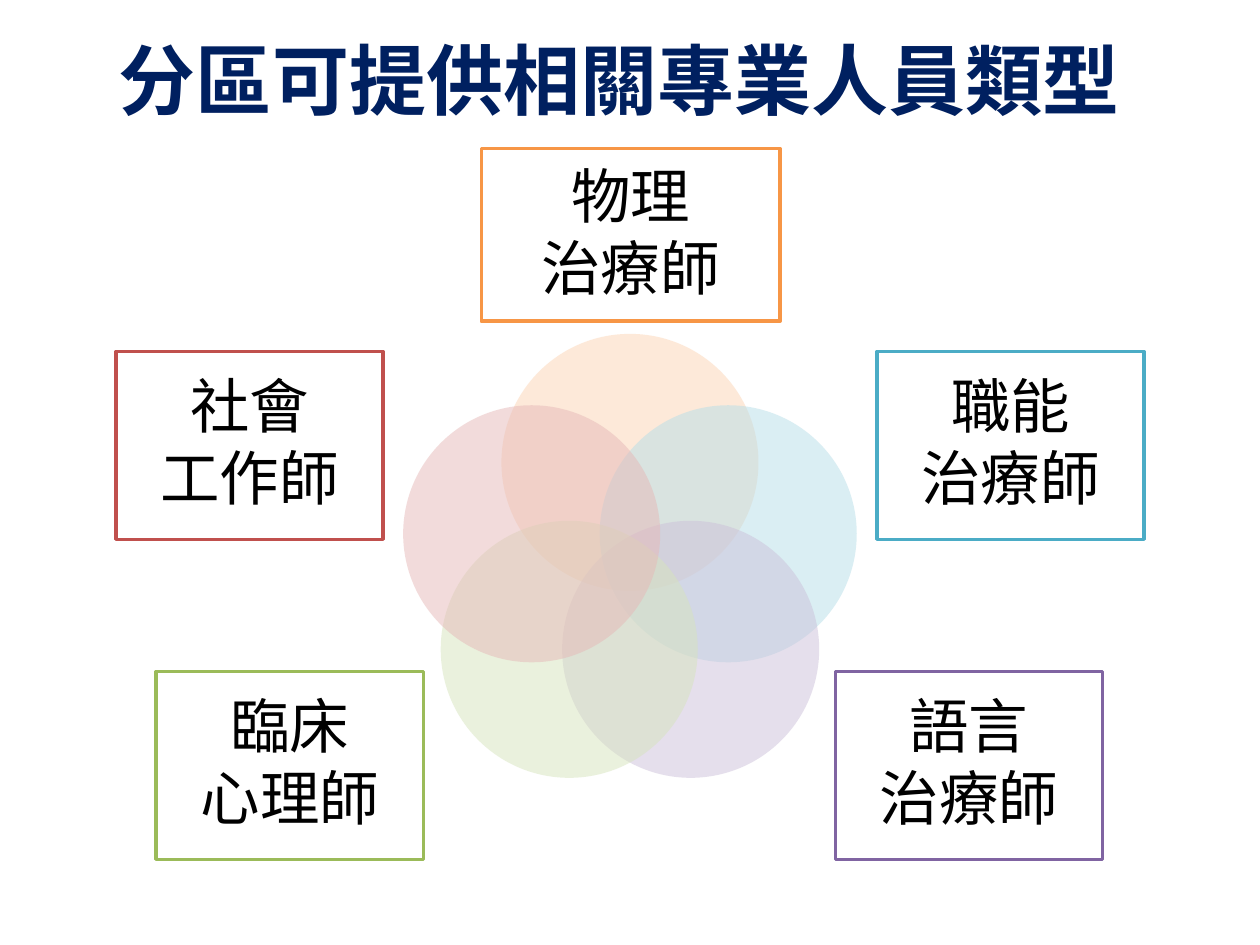
from dataclasses import dataclass
from math import cos, radians, sin

from lxml import etree
from pptx import Presentation
from pptx.dml.color import RGBColor
from pptx.enum.shapes import MSO_SHAPE
from pptx.enum.text import MSO_ANCHOR, PP_ALIGN
from pptx.oxml.ns import qn
from pptx.util import Inches, Pt

OVAL, RECTANGLE = MSO_SHAPE.OVAL, MSO_SHAPE.RECTANGLE
MIDDLE, CENTER = MSO_ANCHOR.MIDDLE, PP_ALIGN.CENTER


@dataclass(frozen=True)
class Theme:
    font: str = "Noto Sans CJK SC"
    title_size: int = 44
    label_size: int = 34
    title: str = "002060"
    text: str = "000000"
    paper: str = "FFFFFF"


THEME = Theme()


def write_lines(frame, lines, size, color, bold=False):
    """Fill a text frame with centred lines, using the font for Chinese too."""
    frame.word_wrap = True
    frame.vertical_anchor = MIDDLE
    for index, line in enumerate(lines):
        paragraph = frame.paragraphs[0] if index == 0 else frame.add_paragraph()
        paragraph.alignment = CENTER
        run = paragraph.add_run()
        run.text = line
        style = {"name": THEME.font, "size": Pt(size), "bold": bold}
        for attribute, value in style.items():
            setattr(run.font, attribute, value)
        run.font.color.rgb = RGBColor.from_string(color)
        east_asian = etree.SubElement(run.font._element, qn("a:ea"))
        east_asian.set("typeface", THEME.font)


def add_filled(kind, left, top, width, height, color):
    shape = slide.shapes.add_shape(
        kind, Inches(left), Inches(top), Inches(width), Inches(height))
    shape.shadow.inherit = False
    shape.fill.solid()
    shape.fill.fore_color.rgb = RGBColor.from_string(color)
    return shape


prs = Presentation()
prs.slide_width, prs.slide_height = Inches(10), Inches(7.5)
slide = prs.slides.add_slide(prs.slide_layouts[6])

title = slide.shapes.add_textbox(Inches(0.79), Inches(0), Inches(8.25), Inches(1.25))
write_lines(title.text_frame, ["分區可提供相關專業人員類型"],
            THEME.title_size, THEME.title, bold=True)

# Clockwise from the top: lines, circle colour, border colour, label box
PROFESSIONS = [
    (("物理", "治療師"), "FCD5B5", "F79646", (3.82, 1.18, 2.37, 1.37)),
    (("職能", "治療師"), "B7DEE8", "4BACC6", (6.96, 2.79, 2.12, 1.49)),
    (("語言", "治療師"), "CCC1DA", "8064A2", (6.63, 5.33, 2.12, 1.49)),
    (("臨床", "心理師"), "D7E4BD", "9BBB59", (1.24, 5.33, 2.12, 1.49)),
    (("社會", "工作師"), "E6B9B8", "C0504D", (0.92, 2.79, 2.12, 1.49)),
]
RING_X, RING_Y, RING_RADIUS, DIAMETER = 5, 4.49, 0.82, 2.04
NO_MARGINS = dict.fromkeys(
    ("margin_left", "margin_top", "margin_right", "margin_bottom"), 0)
LABEL_SPACING = {"line_spacing": 0.9, "space_after": Pt(4.3)}

for index, (lines, circle_color, border_color, box) in enumerate(PROFESSIONS):
    angle = radians(index * 360 / len(PROFESSIONS))
    circle = add_filled(
        OVAL,
        RING_X + RING_RADIUS * sin(angle) - DIAMETER / 2,
        RING_Y - RING_RADIUS * cos(angle) - DIAMETER / 2,
        DIAMETER, DIAMETER, circle_color)
    circle.line.fill.background()
    color_element = circle.fill._xPr.find(qn("a:solidFill"))[0]
    etree.SubElement(color_element, qn("a:alpha")).set("val", "50000")

    label = add_filled(RECTANGLE, *box, THEME.paper)
    label.line.color.rgb = RGBColor.from_string(border_color)
    label.line.width = Pt(2)
    for attribute, value in NO_MARGINS.items():
        setattr(label.text_frame, attribute, value)
    write_lines(label.text_frame, lines, THEME.label_size, THEME.text)
    for paragraph in label.text_frame.paragraphs:
        for attribute, value in LABEL_SPACING.items():
            setattr(paragraph, attribute, value)

prs.save("out.pptx")
